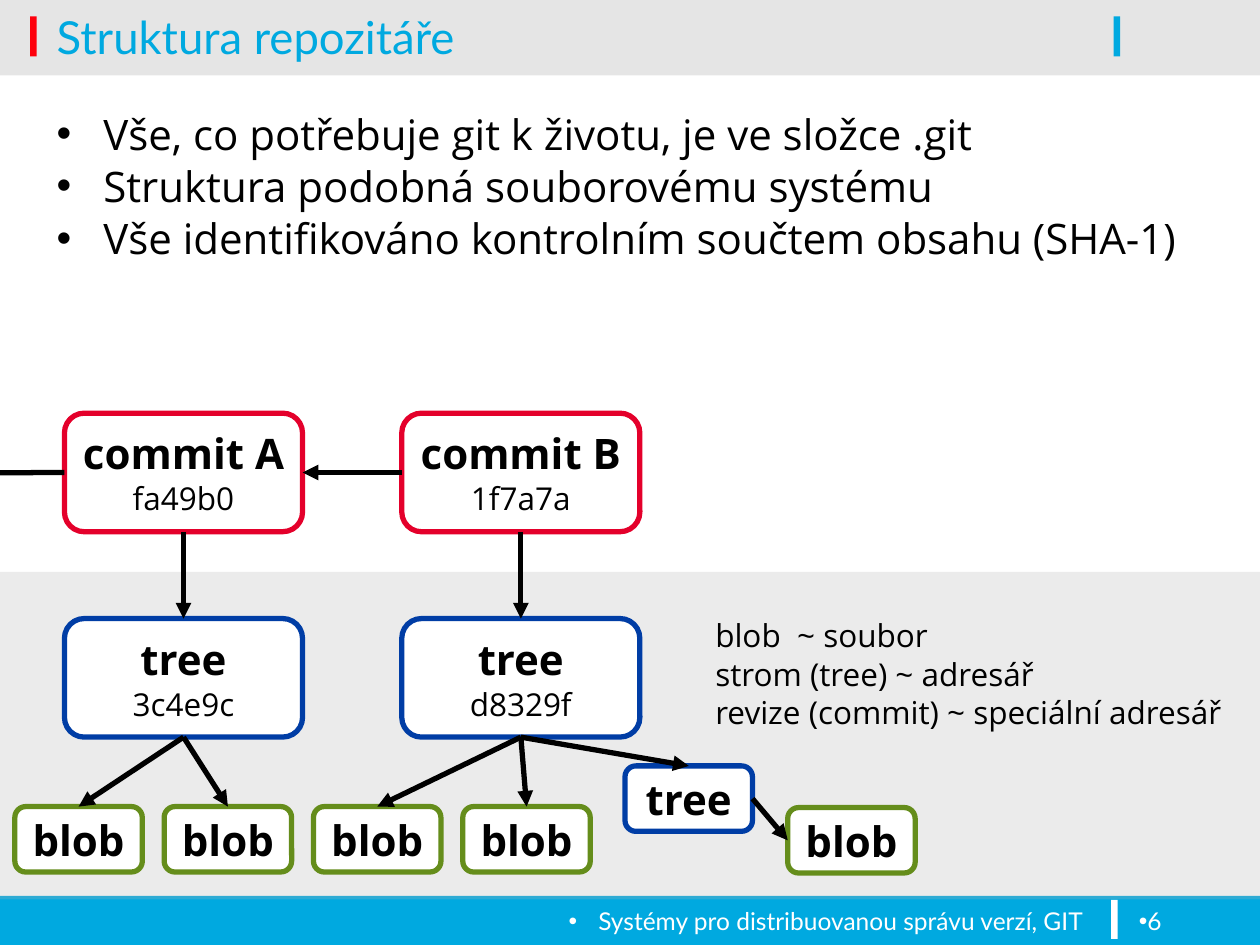
from lxml import etree
from pptx import Presentation
from pptx.dml.color import RGBColor
from pptx.enum.shapes import MSO_CONNECTOR as CONN, MSO_SHAPE as SHAPE
from pptx.enum.text import MSO_ANCHOR as ANCHOR, MSO_AUTO_SIZE as AUTO, PP_ALIGN as ALIGN
from pptx.oxml.ns import qn
from pptx.util import Cm, Pt

COLORS = {
    "black": "000000", "white": "FFFFFF", "cyan": "00A9E0", "accent": "FE000C",
    "gray": "B4B4B4", "commit": "E4002B", "tree": "003DA5", "blob": "658D1B",
}
HEAD_FONT, BODY_FONT = "Lato", "Open Sans"
TOP, LEFT, BOTTOM, RIGHT = 0, 1, 2, 3  # connection sites
WIDE, SMALL = (4.8, 2.39), (2.57, 1.32)  # node sizes


def rgb(name):
    return RGBColor.from_string(COLORS[name])


def write(tf, lines, size=24, font=BODY_FONT, color="black", bold=False,
          align=ALIGN.LEFT, anchor=ANCHOR.TOP, wrap=True, gap=0,
          bullet=False, indent=0):
    """Fill a frame; a line is a text or a (text, size, bold) tuple."""
    tf.auto_size = AUTO.NONE
    tf.word_wrap = wrap
    tf.vertical_anchor = anchor
    for i, line in enumerate(lines):
        text, pt, strong = (line, size, bold) if isinstance(line, str) else line
        p = tf.paragraphs[0] if i == 0 else tf.add_paragraph()
        if bullet:
            pPr = p._p.get_or_add_pPr()
            pPr.set("marL", str(Cm(indent)))
            pPr.set("indent", str(-Cm(indent)))
            etree.SubElement(pPr, qn("a:buFont"), typeface="Arial")
            etree.SubElement(pPr, qn("a:buChar"), char="•")
        p.alignment = align
        p.space_before = Pt(gap if i else 0)
        r = p.add_run()
        r.text = text
        r.font.name, r.font.size, r.font.bold = font, Pt(pt), strong
        r.font.color.rgb = rgb(color)


def add_bar(s, x, y, w, h, color, alpha=None):
    sp = s.shapes.add_shape(SHAPE.RECTANGLE, Cm(x), Cm(y), Cm(w), Cm(h))
    sp.shadow.inherit = False
    sp.fill.solid()
    sp.fill.fore_color.rgb = rgb(color)
    sp.line.fill.background()
    if alpha is not None:
        clr = sp._element.spPr.find(".//" + qn("a:srgbClr"))
        etree.SubElement(clr, qn("a:alpha"), val=str(alpha * 1000))


def add_node(s, kind, x, y, size, name, code=None):
    sp = s.shapes.add_shape(SHAPE.ROUNDED_RECTANGLE, Cm(x), Cm(y), *map(Cm, size))
    sp.shadow.inherit = False
    sp.fill.solid()
    sp.fill.fore_color.rgb = rgb("white")
    sp.line.color.rgb = rgb(kind)
    sp.line.width = Pt(3)
    lines = [(name, 24, True)] + ([(code, 18, False)] if code else [])
    write(sp.text_frame, lines, align=ALIGN.CENTER, anchor=ANCHOR.MIDDLE, gap=0.6)
    return sp


def add_line(s, x1=0, y1=0, x2=0, y2=0, arrow=True):
    line = s.shapes.add_connector(CONN.STRAIGHT, Cm(x1), Cm(y1), Cm(x2), Cm(y2))
    line.line.color.rgb = rgb("black")
    line.line.width = Pt(3)
    if arrow:
        etree.SubElement(line.line._get_or_add_ln(), qn("a:tailEnd"), type="triangle")
    etree.SubElement(line._element.spPr, qn("a:effectLst"))
    return line


def link(s, start, start_site, end, end_site):
    line = add_line(s)
    line.begin_connect(start, start_site)
    line.end_connect(end, end_site)


def add_text(s, x, y, w, h, lines, **fmt):
    write(s.shapes.add_textbox(Cm(x), Cm(y), Cm(w), Cm(h)).text_frame, lines, **fmt)


def fill_placeholder(sp, x, y, w, h, lines, **fmt):
    sp.left, sp.top, sp.width, sp.height = Cm(x), Cm(y), Cm(w), Cm(h)
    write(sp.text_frame, lines, **fmt)
    sp._element.getparent().append(sp._element)  # bring in front of the bands


def add_background(s):
    add_bar(s, 0, 18.06, 25.4, 0.99, "cyan")
    add_bar(s, 0, 1.42, 25.4, 0.1, "black", 10)
    add_bar(s, 0, 0, 25.4, 1.42, "black", 10)
    add_bar(s, 0.61, 0.33, 0.13, 0.81, "accent")
    add_bar(s, 22.4, 18.14, 0.13, 0.79, "white")
    add_bar(s, 22.45, 0.33, 0.13, 0.81, "cyan")
    add_bar(s, 0, 11.53, 25.4, 6.6, "gray", 26)


def add_graph(s):
    # Commits and their root trees, one column each
    columns = [("commit A", "fa49b0", "3c4e9c"), ("commit B", "1f7a7a", "d8329f")]
    commits, trees = [], []
    for i, (name, commit_code, tree_code) in enumerate(columns):
        x = 1.3 + 6.8 * i
        commits.append(add_node(s, "commit", x, 8.33, WIDE, name, commit_code))
        trees.append(add_node(s, "tree", x, 12.47, WIDE, "tree", tree_code))

    # Contents of the trees
    blobs = [add_node(s, "blob", 0.3 + 3.01 * i, 16.26, SMALL, "blob") for i in range(4)]
    subtree = add_node(s, "tree", 12.6, 15.44, SMALL, "tree")
    leaf = add_node(s, "blob", 15.88, 16.28, SMALL, "blob")

    # Links
    for commit, tree in zip(commits, trees):
        link(s, commit, BOTTOM, tree, TOP)
    for i, blob in enumerate(blobs):
        link(s, trees[i // 2], BOTTOM, blob, TOP)
    link(s, trees[1], BOTTOM, subtree, TOP)
    link(s, subtree, RIGHT, leaf, LEFT)
    link(s, commits[1], LEFT, commits[0], RIGHT)
    history = add_line(s, 0, 9.53, 1.3, 9.53, arrow=False)
    history.end_connect(commits[0], LEFT)


def main():
    prs = Presentation()
    prs.slide_width, prs.slide_height = Cm(25.4), Cm(19.05)
    s = prs.slides.add_slide(prs.slide_layouts[1])
    add_background(s)

    # Title and list
    fill_placeholder(s.shapes.title, 0.89, -0.28, 21.39, 2.01, ["Struktura repozitáře"],
                     size=26, font=HEAD_FONT, color="cyan", anchor=ANCHOR.MIDDLE)
    body = s.placeholders[1]
    body.text_frame.margin_top = Cm(0.05)
    fill_placeholder(body, 0.89, 2.13, 24, 14.81, [
        "Vše, co potřebuje git k životu, je ve složce .git",
        "Struktura podobná souborovému systému",
        "Vše identifikováno kontrolním součtem obsahu (SHA-1)",
    ], gap=1, bullet=True, indent=0.94)

    add_graph(s)

    # Legend
    add_text(s, 14.17, 12.29, 11.17, 2.87, [
        "blob  ~ soubor",
        "strom (tree) ~ adresář",
        "revize (commit) ~ speciální adresář",
    ], size=18, gap=0.6, wrap=False)

    # Footer
    footer = dict(size=14, font=HEAD_FONT, color="white", bullet=True)
    add_text(s, 0.3, 18.14, 21.79, 0.91, ["Systémy pro distribuovanou správu verzí, GIT"],
             align=ALIGN.RIGHT, indent=0.6, **footer)
    add_text(s, 22.71, 18.14, 2.29, 0.91, ["6"], **footer)

    prs.save("out.pptx")


if __name__ == "__main__":
    main()
